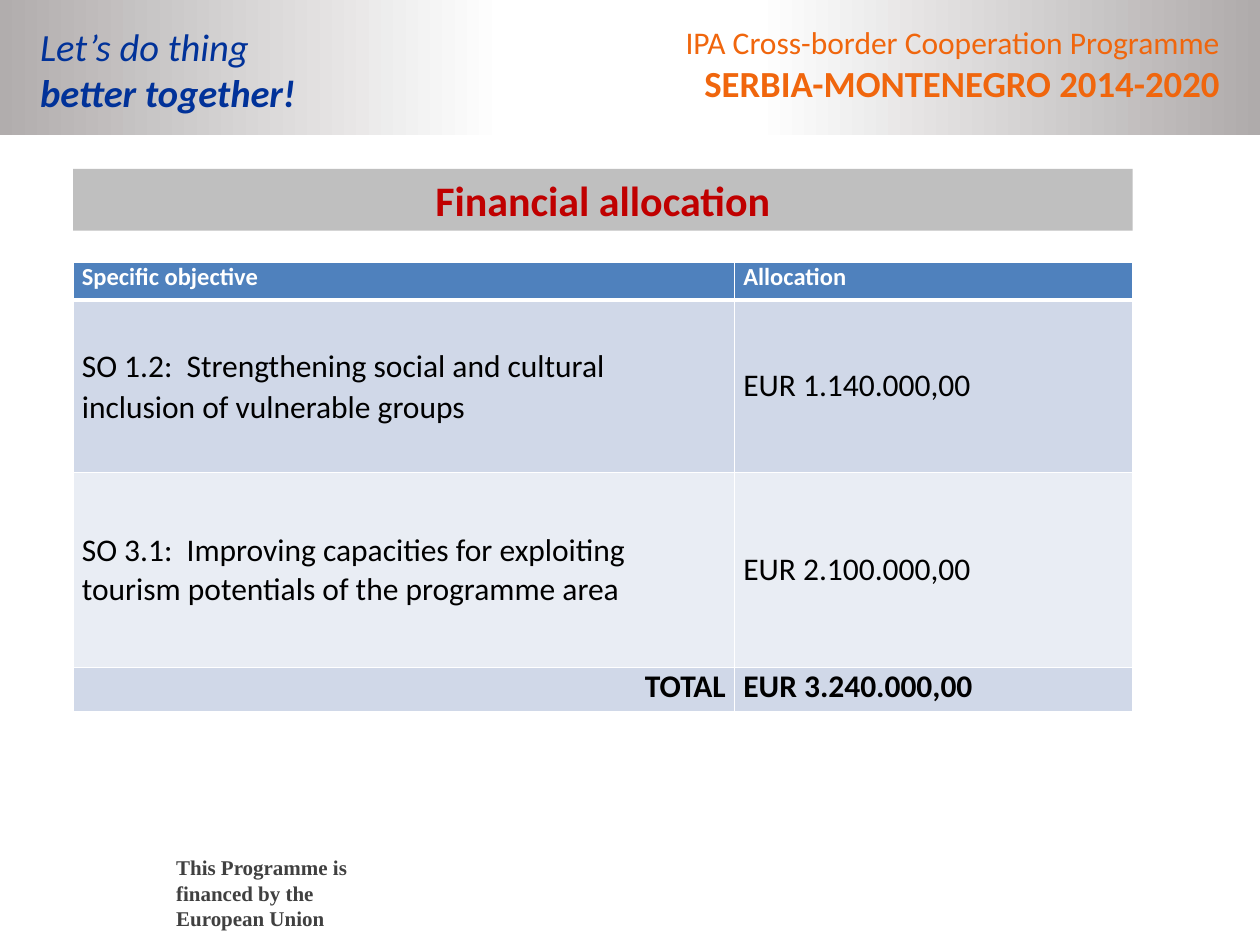
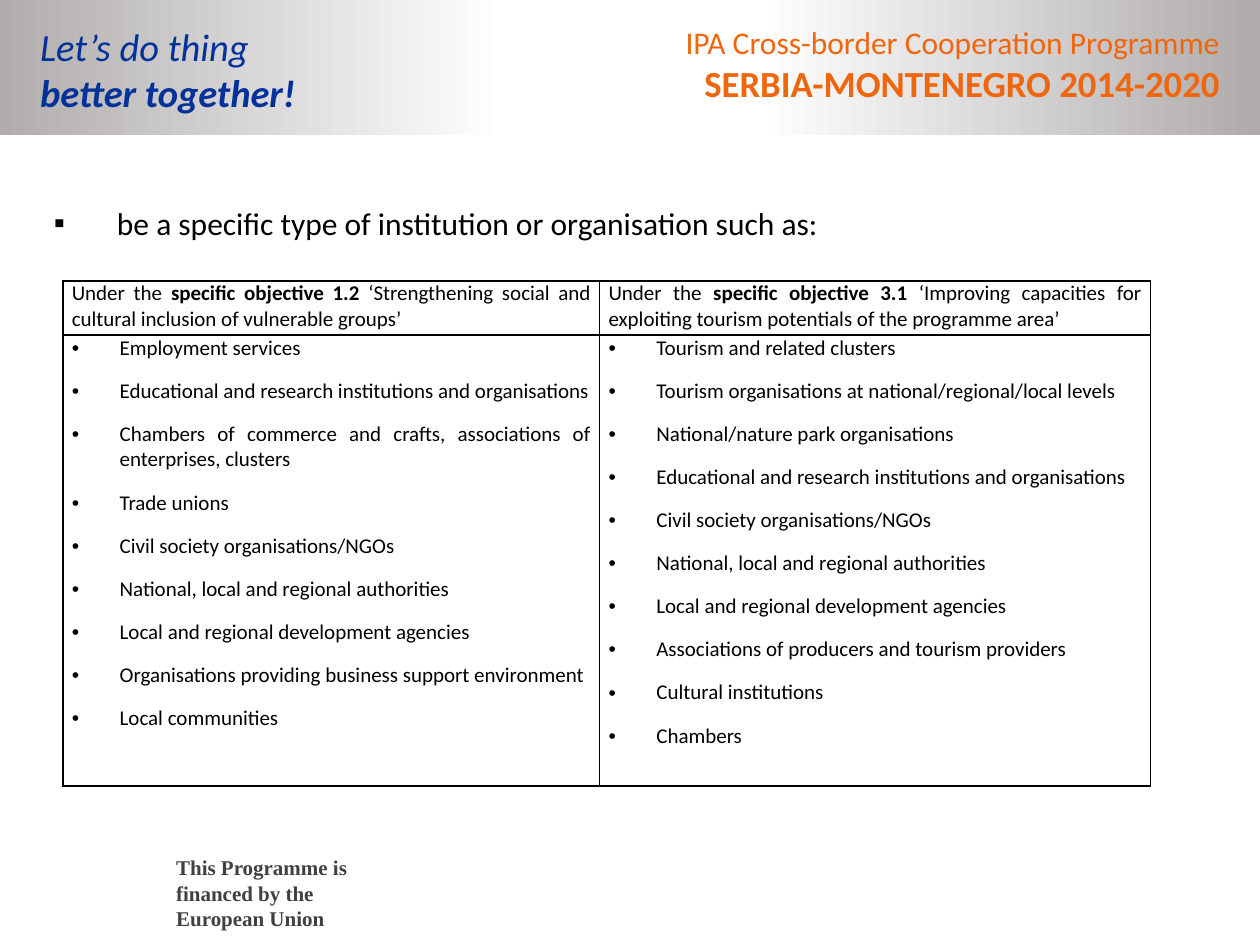
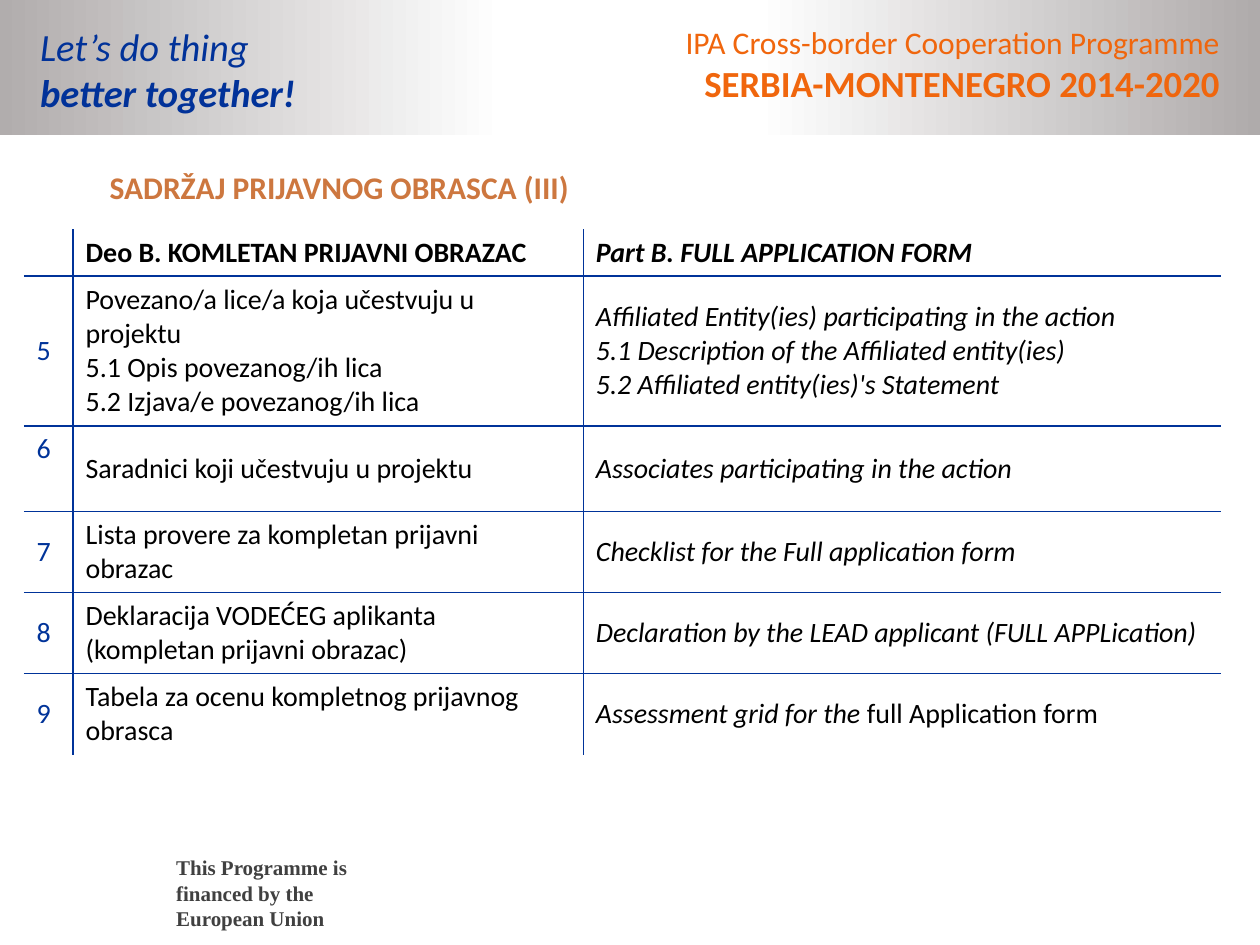
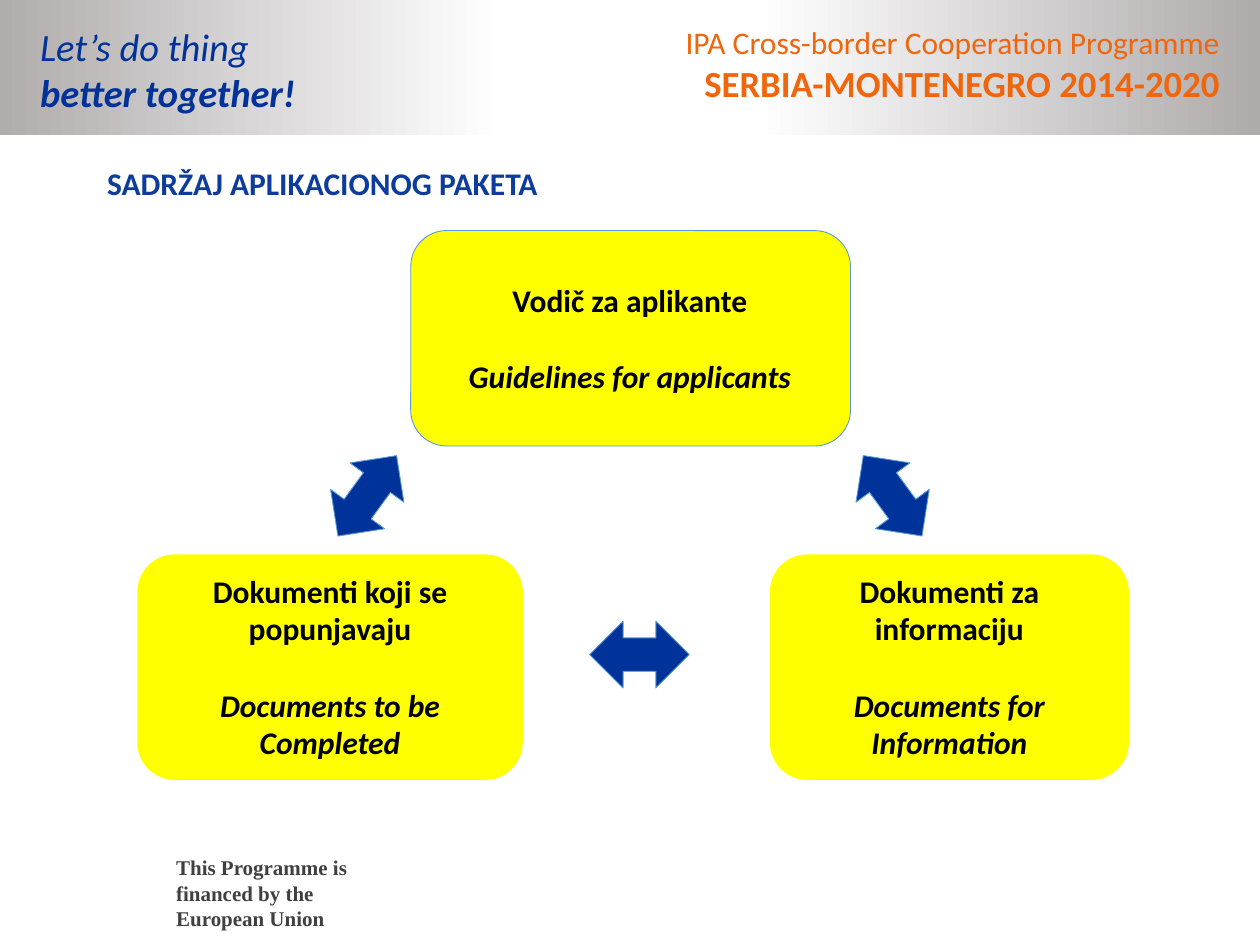
"""Build four programme slides: allocations, eligible bodies, form contents and application package."""
from lxml import etree
from pptx import Presentation
from pptx.dml.color import RGBColor
from pptx.enum.shapes import MSO_SHAPE
from pptx.enum.text import MSO_ANCHOR, MSO_AUTO_SIZE, PP_ALIGN
from pptx.oxml.ns import qn
from pptx.util import Emu, Pt

PX = 9144
LEFT, CENTER, RIGHT, JUSTIFY = PP_ALIGN.LEFT, PP_ALIGN.CENTER, PP_ALIGN.RIGHT, PP_ALIGN.JUSTIFY
TOP, MIDDLE = MSO_ANCHOR.TOP, MSO_ANCHOR.MIDDLE
RECTANGLE, ROUNDED, ARROW = MSO_SHAPE.RECTANGLE, MSO_SHAPE.ROUNDED_RECTANGLE, MSO_SHAPE.LEFT_RIGHT_ARROW
NO_AUTOFIT = MSO_AUTO_SIZE.NONE
TITLE_ONLY, BLANK = 5, 6

COLORS = {
    "white": "FFFFFF", "black": "000000", "slogan": "013299", "programme": "F0660D",
    "funding": "404040", "title_band": "BFBFBF", "red": "C00000", "header": "4F81BD",
    "row_dark": "D0D8E8", "row_light": "E9EDF4", "navy": "003399", "copper": "CD773F",
    "royal": "0E3C9C", "yellow": "FFFF00", "outline": "5B9BD5",
}
BAND_STOPS = [(0, "AFABAB"), (40, "FFFFFF"), (60, "FFFFFF"), (100, "B1ADAD")]
HOLDER_KEYS = ("vertical_anchor", "margin_left", "margin_right", "margin_top", "margin_bottom")
PARAGRAPH_KEYS = ("alignment", "space_after", "line_spacing")
FONT_KEYS = ("name", "size", "bold", "italic")
TIGHT = {"margin_left": Emu(7 * PX), "margin_right": Emu(7 * PX), "margin_top": 0, "margin_bottom": 0}
BOLD, ITALIC, PLAIN = {"bold": True}, {"italic": True}, {"italic": False}


def rgb(color):
    return RGBColor.from_string(COLORS[color])


def apply(target, values, keys):
    for key in keys:
        if key in values:
            setattr(target, key, values[key])


def solid_fill(parent, color):
    fill = etree.SubElement(parent, qn("a:solidFill"))
    etree.SubElement(fill, qn("a:srgbClr"), val=COLORS[color])


class Deck:
    def __init__(self):
        self.presentation = Presentation()
        self.presentation.slide_width = Emu(1000 * PX)
        self.presentation.slide_height = Emu(750 * PX)
        self.base = {"name": "Calibri", "size": Pt(18), "color": "black", "alignment": LEFT}
        self.slide = None

    def place(self, box):
        return [Emu(length * PX) for length in box]

    def new_slide(self, layout):
        self.slide = self.presentation.slides.add_slide(self.presentation.slide_layouts[layout])
        for placeholder in list(self.slide.placeholders):
            if placeholder.placeholder_format.idx:
                placeholder.element.getparent().remove(placeholder.element)
        self.text((130, 673, 156, 71), ["This Programme is financed by the European Union"],
                  name="Times New Roman", size=Pt(12), bold=True, color="funding", vertical_anchor=MIDDLE)
        self.header_band()
        self.text((22, 13, 434, 84), ["Let’s do thing", [("better together!", BOLD)]],
                  size=Pt(22), italic=True, color="slogan")
        self.text((528, 13, 450, 76),
                  ["IPA Cross-border Cooperation Programme",
                   [("SERBIA-MONTENEGRO 2014-2020", {"bold": True, "size": Pt(21)})]],
                  color="programme", alignment=RIGHT)

    def header_band(self):
        band = self.shape(RECTANGLE, (0, 0, 1000, 107), "white")
        band.fill.gradient()
        band.fill.gradient_angle = 180
        stops = band.element.find(".//" + qn("a:gsLst"))
        for stop in list(stops):
            stops.remove(stop)
        for position, color in BAND_STOPS:
            stop = etree.SubElement(stops, qn("a:gs"), pos=str(position * 1000))
            etree.SubElement(stop, qn("a:srgbClr"), val=color)

    def put_text(self, holder, frame, paragraphs, style):
        style = {**self.base, **style}
        apply(holder, style, HOLDER_KEYS)
        for index, pieces in enumerate(paragraphs):
            paragraph = frame.add_paragraph() if index else frame.paragraphs[0]
            if "bullet" in style:
                self.bullet(paragraph, *style["bullet"])
            apply(paragraph, style, PARAGRAPH_KEYS)
            for piece in [pieces] if isinstance(pieces, str) else pieces:
                words, changes = (piece, {}) if isinstance(piece, str) else piece
                run = paragraph.add_run()
                run.text = words
                apply(run.font, {**style, **changes}, FONT_KEYS)
                run.font.color.rgb = rgb(style["color"])
        if not paragraphs:
            etree.SubElement(frame.paragraphs[0]._p, qn("a:endParaRPr"), sz=str(style["size"].centipoints))

    def bullet(self, paragraph, mark, indent):
        properties = paragraph._p.get_or_add_pPr()
        properties.set("marL", str(indent * PX))
        properties.set("indent", str(-indent * PX))
        etree.SubElement(properties, qn("a:buFont"), typeface="Arial")
        etree.SubElement(properties, qn("a:buChar"), char=mark)

    def fill_frame(self, shape, paragraphs, style):
        shape.text_frame.word_wrap = True
        shape.text_frame.auto_size = NO_AUTOFIT
        self.put_text(shape.text_frame, shape.text_frame, paragraphs, {"vertical_anchor": TOP, **style})

    def text(self, box, paragraphs, **style):
        self.fill_frame(self.slide.shapes.add_textbox(*self.place(box)), paragraphs, style)

    def title(self, box, words, fill=None, **style):
        title = self.slide.shapes.title
        title.left, title.top, title.width, title.height = self.place(box)
        if fill:
            title.fill.solid()
            title.fill.fore_color.rgb = rgb(fill)
        self.fill_frame(title, [words], {"bold": True, **style})

    def shape(self, kind, box, fill, line=None, rotation=0, paragraphs=(), **style):
        shape = self.slide.shapes.add_shape(kind, *self.place(box))
        shape.shadow.inherit = False
        shape.rotation = rotation
        shape.fill.solid()
        shape.fill.fore_color.rgb = rgb(fill)
        if line:
            shape.line.color.rgb = rgb(line)
            shape.line.width = Pt(0.5)
        else:
            shape.line.fill.background()
        if paragraphs:
            self.fill_frame(shape, paragraphs, style)
        return shape

    def table(self, corner, columns, heights, rows, line, header_line=1, outer=True, **style):
        box = (*corner, sum(columns), sum(heights))
        table = self.slide.shapes.add_table(len(heights), len(columns), *self.place(box)).table
        table.first_row = table.horz_banding = False
        for column, width in zip(table.columns, columns):
            column.width = Emu(width * PX)
        for row, height in zip(table.rows, heights):
            row.height = Emu(height * PX)
        last_row, last_column = len(heights) - 1, len(columns) - 1
        for r, cells in enumerate(rows):
            for c, (paragraphs, changes) in enumerate(cells):
                cell = table.cell(r, c)
                look = {**style, **changes}
                self.put_text(cell, cell.text_frame, paragraphs, look)
                if "fill" in look:
                    cell.fill.solid()
                    cell.fill.fore_color.rgb = rgb(look["fill"])
                else:
                    cell.fill.background()
                self.borders(cell, line, {
                    "L": 1 if outer or c else 0,
                    "R": 1 if outer or c < last_column else 0,
                    "T": header_line if r == 1 else 1 if outer or r else 0,
                    "B": header_line if r == 0 else 1 if outer or r < last_row else 0,
                })

    def borders(self, cell, color, widths):
        properties = cell._tc.get_or_add_tcPr()
        for index, (side, width) in enumerate(widths.items()):
            border = etree.Element(qn("a:ln" + side), w=str(int(Pt(width))))
            if width:
                solid_fill(border, color)
            else:
                etree.SubElement(border, qn("a:noFill"))
            properties.insert(index, border)


def financial_allocation(deck):
    deck.new_slide(TITLE_ONLY)
    deck.title((58, 134, 841, 49), "Financial allocation", fill="title_band", size=Pt(24),
               color="red", alignment=CENTER, vertical_anchor=MIDDLE)
    header = {"fill": "header", "size": Pt(14), "bold": True, "color": "white"}
    dark = {"fill": "row_dark", "vertical_anchor": MIDDLE}
    light = {"fill": "row_light", "vertical_anchor": MIDDLE}
    total = {"fill": "row_dark", "bold": True}
    rows = [
        [(["Specific objective"], header), (["Allocation"], header)],
        [(["SO 1.2:  Strengthening social and cultural inclusion of vulnerable groups"],
          {**dark, "alignment": LEFT, "line_spacing": 1.07}),
         (["EUR 1.140.000,00"], dark)],
        [(["SO 3.1:  Improving capacities for exploiting tourism potentials of the programme area"],
          {**light, "alignment": LEFT}),
         (["EUR 2.100.000,00"], light)],
        [(["TOTAL"], {**total, "alignment": RIGHT}), (["EUR 3.240.000,00"], total)],
    ]
    deck.table((58, 208), (525, 316), (30, 137, 155, 35), rows, "white", header_line=3,
               alignment=JUSTIFY, space_after=Pt(10), **TIGHT)


def eligible_institutions(deck):
    deck.new_slide(BLANK)
    deck.text((33, 157, 835, 40), ["be a specific type of institution or organisation such as:"], bullet=("▪", 50))
    objectives = [
        ("1.2", "‘Strengthening social and cultural inclusion of vulnerable groups’"),
        ("3.1", "‘Improving capacities for exploiting tourism potentials of the programme area’"),
    ]
    social = [
        "Employment services",
        "Educational and research institutions and organisations",
        "Chambers of commerce and crafts, associations of enterprises, clusters",
        "Trade unions",
        "Civil society organisations/NGOs",
        "National, local and regional authorities",
        "Local and regional development agencies",
        "Organisations providing business support environment",
        "Local communities",
    ]
    tourism = [
        "Tourism and related clusters",
        "Tourism organisations at national/regional/local levels",
        "National/nature park organisations",
        "Educational and research institutions and organisations",
        "Civil society organisations/NGOs",
        "National, local and regional authorities",
        "Local and regional development agencies",
        "Associations of producers and tourism providers",
        "Cultural institutions",
        "Chambers",
    ]
    rows = [
        [([["Under the ", (f"specific objective {number}", BOLD), f" {aim}"]], {}) for number, aim in objectives],
        [(bodies, {"bullet": ("•", 38)}) for bodies in (social, tourism)],
    ]
    deck.table((50, 223), (426, 437), (43, 358), rows, "black", size=Pt(12),
               alignment=JUSTIFY, space_after=Pt(10), **TIGHT)


def application_form(deck):
    deck.new_slide(TITLE_ONLY)
    deck.title((77, 128, 850, 40), "SADRŽAJ PRIJAVNOG OBRASCA (III)", color="copper")
    sections = [
        ("5", ["Povezano/a lice/a koja učestvuju u projektu",
               "5.1 Opis povezanog/ih lica",
               "5.2 Izjava/e povezanog/ih lica"],
         ["Affiliated Entity(ies) participating in the action",
          "5.1 Description of the Affiliated entity(ies)",
          "5.2 Affiliated entity(ies)'s Statement"]),
        ("6", ["Saradnici koji učestvuju u projektu"], ["Associates participating in the action"]),
        ("7", ["Lista provere za kompletan prijavni obrazac"], ["Checklist for the Full application form"]),
        ("8", ["Deklaracija VODEĆEG aplikanta (kompletan prijavni obrazac)"],
         ["Declaration by the LEAD applicant (FULL APPLication)"]),
        ("9", ["Tabela za ocenu kompletnog prijavnog obrasca"],
         [["Assessment grid for the ", ("full Application form", PLAIN)]]),
    ]
    rows = [[([], {}), (["Deo B. KOMLETAN PRIJAVNI OBRAZAC"], BOLD),
             (["Part B. FULL APPLICATION FORM"], {**BOLD, **ITALIC})]]
    for number, serbian, english in sections:
        anchor = TOP if number == "6" else MIDDLE
        rows.append([([number], {"color": "navy", "vertical_anchor": anchor}), (serbian, {}), (english, ITALIC)])
    deck.table((19, 182), (39, 405, 506), (35, 113, 68, 61, 61, 61), rows, "navy", outer=False,
               size=Pt(16), vertical_anchor=MIDDLE)


def application_package(deck):
    deck.new_slide(TITLE_ONLY)
    deck.title((75, 125, 850, 40), "SADRŽAJ APLIKACIONOG PAKETA", color="royal")
    label = {"bold": True, "alignment": CENTER, "space_after": Pt(22)}
    deck.shape(ROUNDED, (326, 183, 349, 171), "yellow", line="outline")
    deck.text((345, 218, 310, 101), ["Vodič za aplikante", [("Guidelines for applicants", ITALIC)]], **label)
    documents = [
        (109, 306, "Dokumenti koji se popunjavaju", "Documents to be Completed"),
        (611, 285, "Dokumenti za informaciju", "Documents for Information"),
    ]
    for left, width, serbian, english in documents:
        deck.shape(ROUNDED, (left, 440, width, 179), "yellow",
                   paragraphs=[serbian, [(english, ITALIC)]], **label)
    for left, top, rotation in [(669, 367, 233.9), (252, 367, 126.1), (468, 493, 180)]:
        deck.shape(ARROW, (left, top, 79, 53), "navy", line="outline", rotation=rotation)


def main():
    deck = Deck()
    for build in (financial_allocation, eligible_institutions, application_form, application_package):
        build(deck)
    deck.presentation.save("out.pptx")


if __name__ == "__main__":
    main()
